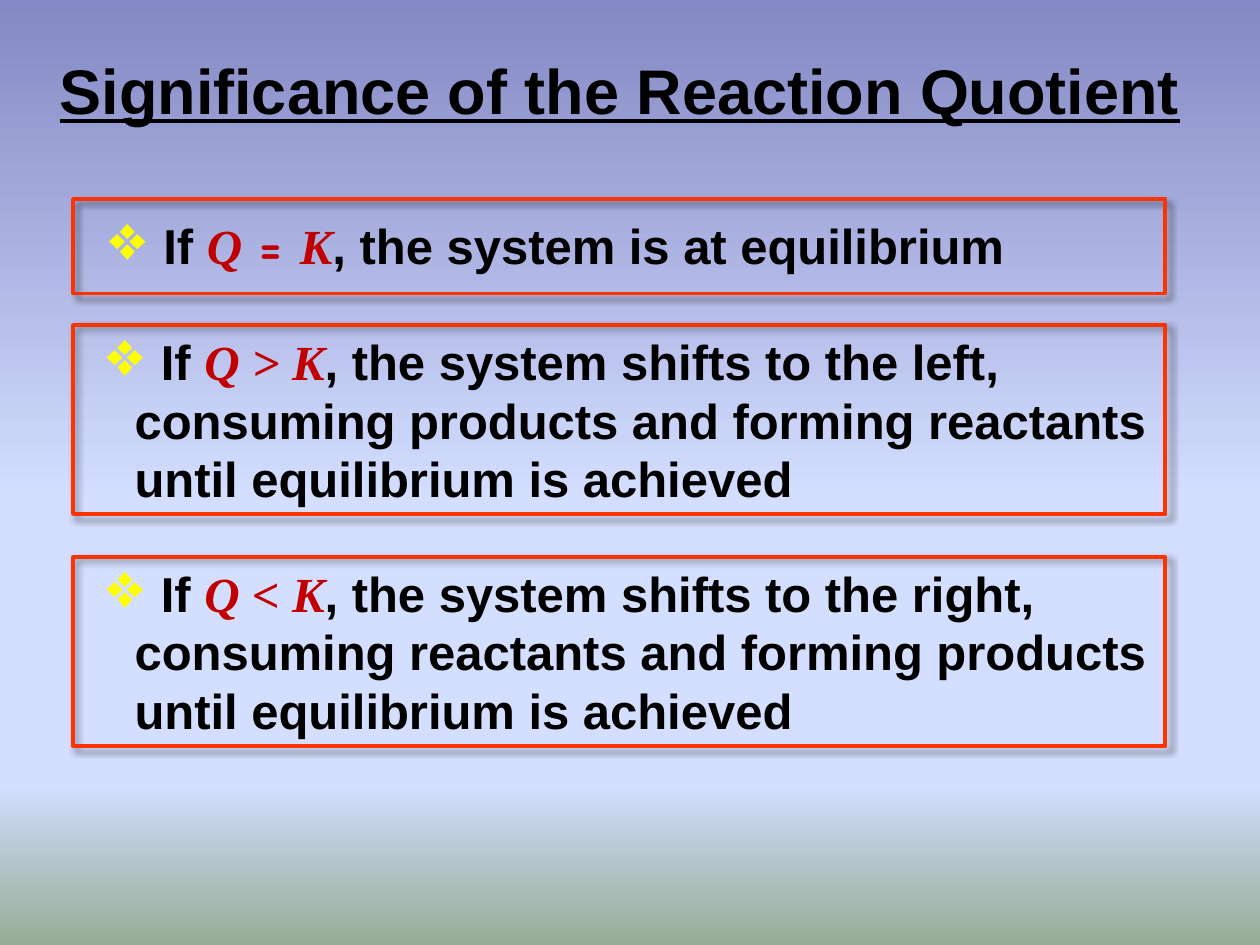
from dataclasses import dataclass

from lxml.etree import SubElement
from pptx import Presentation
from pptx.dml.color import RGBColor
from pptx.enum.shapes import MSO_SHAPE
from pptx.enum.text import MSO_ANCHOR, PP_ALIGN
from pptx.oxml.ns import qn
from pptx.util import Inches, Pt


@dataclass(frozen=True)
class Theme:
    ink: str = "000000"
    symbol: str = "C00000"
    bullet: str = "FFFF00"
    frame: str = "FF3300"
    sky: tuple = ((0, "8488C4"), (53, "D4DEFF"), (83, "D4DEFF"), (100, "96AB94"))
    title_size: int = 36
    body_size: int = 28
    bullet_percent: int = 130
    body_font: str = "Arial"
    symbol_font: str = "Times New Roman"
    spacer_font: str = "Comic Neue"


THEME = Theme()


def add_xml(parent, tag, **attributes):
    return SubElement(parent, qn(tag), {key: str(value) for key, value in attributes.items()})


def paint_background(slide):
    fill = slide.background.fill
    fill.gradient()
    fill.gradient_angle = 270
    stops = slide.element.find(".//" + qn("a:gsLst"))
    for stop in list(stops):
        stops.remove(stop)
    for percent, color in THEME.sky:
        stop = add_xml(stops, "a:gs", pos=percent * 1000)
        add_xml(stop, "a:srgbClr", val=color)


def add_run(paragraph, text, *, font=THEME.body_font, size=THEME.body_size,
            color=THEME.ink, italic=False, underline=False):
    run = paragraph.add_run()
    run.text = text
    run.font.name = font
    run.font.size = Pt(size)
    run.font.bold = True
    run.font.italic = italic
    run.font.underline = underline
    run.font.color.rgb = RGBColor.from_string(color)


def add_text_frame(slide, left, top, width, height):
    box = slide.shapes.add_textbox(Inches(left), Inches(top), Inches(width), Inches(height))
    box.text_frame.word_wrap = True
    return box.text_frame


def add_title(slide, text):
    frame = add_text_frame(slide, 0.17, 0.08, 9.5, 1.25)
    frame.vertical_anchor = MSO_ANCHOR.MIDDLE
    heading = frame.paragraphs[0]
    heading.alignment = PP_ALIGN.CENTER
    add_run(heading, text, size=THEME.title_size, underline=True)


def add_bullet(paragraph):
    properties = paragraph._p.get_or_add_pPr()
    properties.set("marL", str(Inches(0.24)))
    properties.set("indent", str(Inches(-0.22)))
    bullet_color = add_xml(properties, "a:buClr")
    add_xml(bullet_color, "a:srgbClr", val=THEME.bullet)
    add_xml(properties, "a:buSzPct", val=THEME.bullet_percent * 1000)
    add_xml(properties, "a:buChar", char="❖")


def add_case(slide, left, top, height, relation, outcome):
    case = add_text_frame(slide, left, top, 8.68, height).paragraphs[0]
    add_bullet(case)
    add_run(case, " ", font=THEME.spacer_font)
    add_run(case, "If ")
    for text, font, italic in relation:
        add_run(case, text, font=font, color=THEME.symbol, italic=italic)
    add_run(case, outcome)


def add_frame(slide, top, height):
    frame = slide.shapes.add_shape(
        MSO_SHAPE.RECTANGLE, Inches(0.58), Inches(top), Inches(8.67), Inches(height))
    frame.fill.background()
    frame.line.color.rgb = RGBColor.from_string(THEME.frame)
    frame.line.width = Pt(2.25)
    frame.shadow.inherit = False
    effects = frame._element.spPr.find(qn("a:effectLst"))
    shadow = add_xml(effects, "a:outerShdw", blurRad=Pt(4), dist=Pt(3),
                     dir=45 * 60000, algn="tl", rotWithShape=0)
    shade = add_xml(shadow, "a:srgbClr", val=THEME.ink)
    add_xml(shade, "a:alpha", val=40000)


def main():
    deck = Presentation()
    deck.slide_width, deck.slide_height = Inches(10), Inches(7.5)
    slide = deck.slides.add_slide(deck.slide_layouts[6])
    paint_background(slide)
    add_title(slide, "Significance of the Reaction Quotient")

    symbol, spacer = THEME.symbol_font, THEME.spacer_font
    equal = [("Q", symbol, True), (" = ", spacer, False), ("K", symbol, True)]
    add_case(slide, 0.75, 1.66, 0.57, equal, ", the system is at equilibrium")
    shifts = [(2.58, ">", "left", "products", "reactants"),
              (4.42, "<", "right", "reactants", "products")]
    for top, sign, side, consumed, formed in shifts:
        add_case(slide, 0.73, top, 1.5, [(f"Q {sign} K", symbol, True)],
                 f", the system shifts to the {side}, consuming {consumed} "
                 f"and forming {formed} until equilibrium is achieved")

    for top, height in ((1.58, 0.75), (2.58, 1.5), (4.42, 1.5)):
        add_frame(slide, top, height)
    deck.save("out.pptx")


if __name__ == "__main__":
    main()
